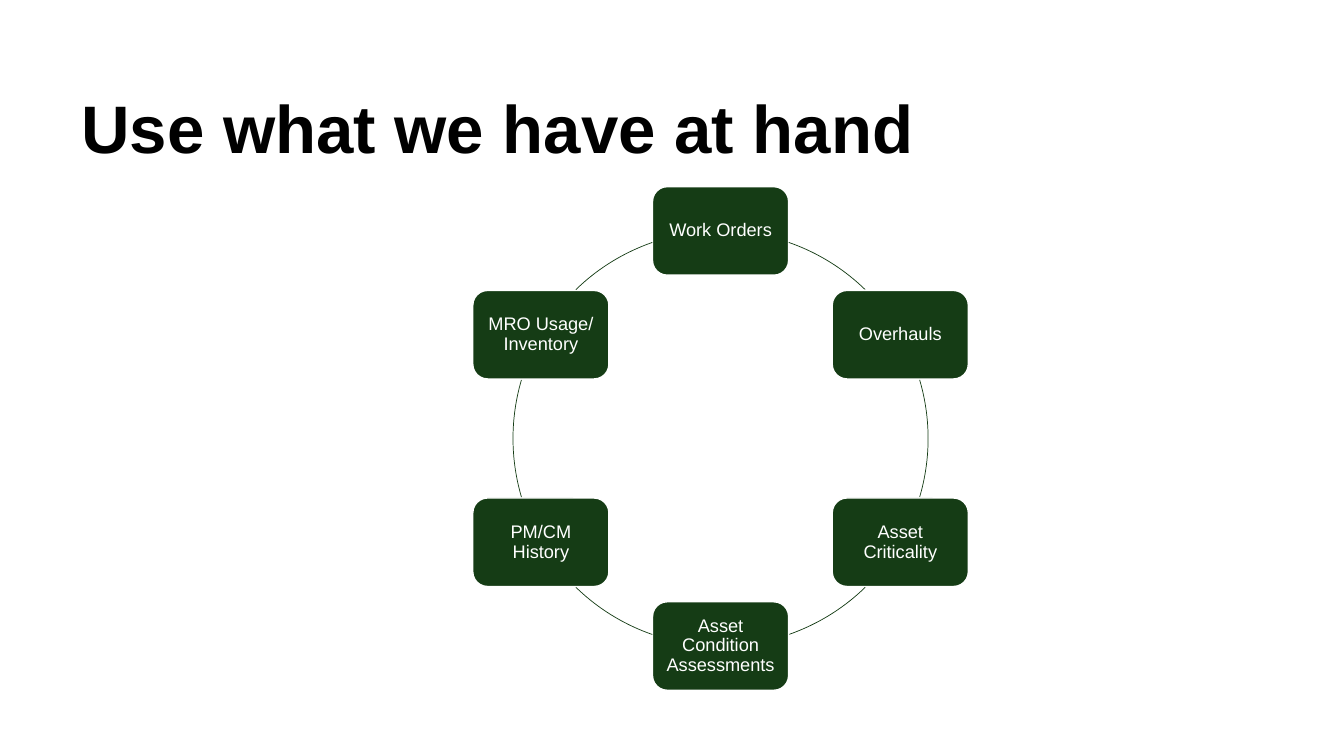
import math

from pptx import Presentation
from pptx.dml.color import RGBColor
from pptx.enum import shapes, text
from pptx.util import Cm, Pt

GREEN = RGBColor(0x15, 0x3C, 0x15)
WHITE = RGBColor(0xFF, 0xFF, 0xFF)
BLACK = RGBColor(0x00, 0x00, 0x00)

CENTER_X, CENTER_Y, RADIUS = 18.16, 11.05, 5.23
BOX_WIDTH, BOX_HEIGHT, BOX_MARGIN = 3.43, 2.23, 0.13

# Each label with the start and end angle of the arc that follows its box
SOURCES = [
    ("Work Orders", 289.2, 314.2),
    ("Overhauls", 343.6, 16.4),
    ("Asset Criticality", 45.8, 70.8),
    ("Asset Condition Assessments", 109.2, 134.2),
    ("PM/CM History", 163.6, 196.4),
    ("MRO Usage/ Inventory", 225.8, 250.8),
]


def write_text(shape, wording, anchor, alignment, size, color, bold=False):
    frame = shape.text_frame
    frame.word_wrap = True
    frame.vertical_anchor = anchor
    paragraph = frame.paragraphs[0]
    paragraph.text = wording
    paragraph.alignment = alignment
    paragraph.line_spacing = 0.9
    font_format = {"name": "Arial", "size": Pt(size), "bold": bold}
    for attribute, value in font_format.items():
        setattr(paragraph.font, attribute, value)
    paragraph.font.color.rgb = color


presentation = Presentation()
presentation.slide_width = Cm(33.87)
presentation.slide_height = Cm(19.05)
slide = presentation.slides.add_slide(presentation.slide_layouts[6])

title = slide.shapes.add_textbox(Cm(1.8), Cm(0.69), Cm(30.25), Cm(3.68))
write_text(title, "Use what we have at hand", text.MSO_ANCHOR.BOTTOM,
           text.PP_ALIGN.LEFT, 48, BLACK, bold=True)

for index, (label, arc_start, arc_end) in enumerate(SOURCES):
    angle = math.radians(index * 360 / len(SOURCES) - 90)
    left = CENTER_X + RADIUS * math.cos(angle) - BOX_WIDTH / 2
    top = CENTER_Y + RADIUS * math.sin(angle) - BOX_HEIGHT / 2
    box = slide.shapes.add_shape(shapes.MSO_SHAPE.ROUNDED_RECTANGLE, Cm(left),
                                 Cm(top), Cm(BOX_WIDTH), Cm(BOX_HEIGHT))
    box.shadow.inherit = False
    box.fill.solid()
    box.fill.fore_color.rgb = GREEN
    box.line.color.rgb = WHITE
    box.line.width = Pt(1)
    for side in ("left", "top", "right", "bottom"):
        setattr(box.text_frame, f"margin_{side}", Cm(BOX_MARGIN))
    write_text(box, label, text.MSO_ANCHOR.MIDDLE, text.PP_ALIGN.CENTER,
               13, WHITE)

    arc = slide.shapes.add_shape(
        shapes.MSO_SHAPE.ARC, Cm(CENTER_X - RADIUS), Cm(CENTER_Y - RADIUS),
        Cm(2 * RADIUS), Cm(2 * RADIUS))
    arc.shadow.inherit = False
    arc.fill.background()
    arc.line.color.rgb = GREEN
    arc.line.width = Pt(0.5)
    # Angles are stored in 1/60000 degree, adjustments in 1/100000
    arc.adjustments[0] = arc_start * 0.6
    arc.adjustments[1] = arc_end * 0.6

presentation.save("out.pptx")
